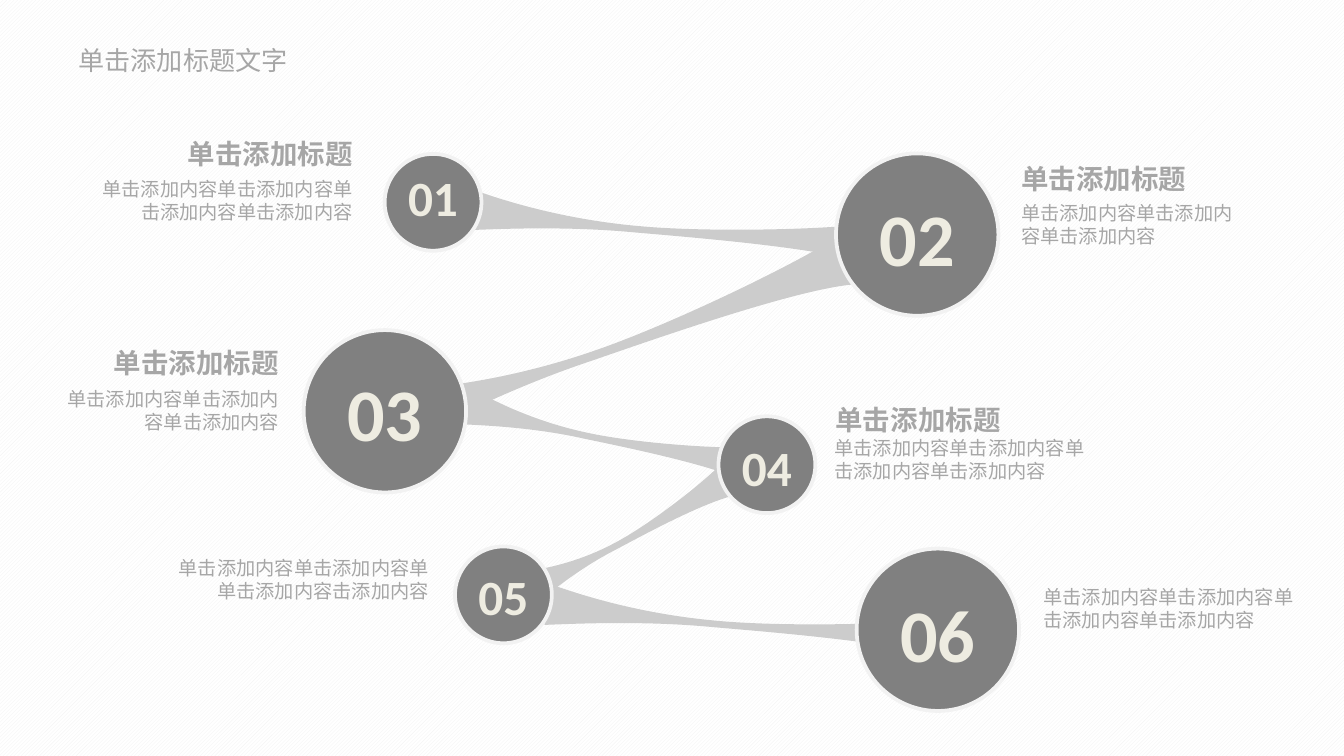
from dataclasses import dataclass

import pptx
import pptx.dml.color
import pptx.enum.dml
import pptx.enum.lang
import pptx.enum.shapes
import pptx.enum.text
import pptx.oxml.ns
import pptx.util
from lxml import etree
from pptx.util import Cm

RGB = pptx.dml.color.RGBColor
ALIGN = pptx.enum.text.PP_ALIGN
qn = pptx.oxml.ns.qn
GREY = RGB(0x80, 0x80, 0x80)
BAND = RGB(0xCC, 0xCC, 0xCC)
PALE = RGB(0xF2, 0xF2, 0xF2)
CREAM = RGB(0xEE, 0xEC, 0xE1)
TEXT = RGB(0xA6, 0xA6, 0xA6)
WHITE = RGB(0xFF, 0xFF, 0xFF)
HEAD = "单击添加标题"
ITEM = "单击添加内容"

UPPER = [(0, 0), (0.11, 0.29), (0.26, 0.55), (0.43, 0.55),
         (0.59, 0.56), (0.89, 0.26), (1, 0)]
LOWER = [(1, 1), (0.9, 0.7), (0.58, 0.71), (0.42, 0.71),
         (0.25, 0.69), (0.09, 0.89), (0, 1)]


@dataclass
class Box:
    left: float
    top: float
    width: float
    height: float

    def cm(self) -> list:
        return [Cm(v) for v in (self.left, self.top, self.width, self.height)]


@dataclass
class Band:
    box: Box
    turn: float


@dataclass
class Node:
    label: str
    left: float
    top: float
    big: bool
    base: float


@dataclass
class Note:
    text: str
    box: Box
    right: bool = False
    head: bool = False


BANDS = [
    Band(Box(10.31, 11.35, 7.62, 0.79), 4.9),
    Band(Box(9.58, 9.7, 4.6, 0.76), 331.9),
    Band(Box(8.66, 7.85, 5.72, 0.76), 11.8),
    Band(Box(8.84, 3.89, 7.62, 0.79), 4.9),
    Band(Box(7.24, 5.87, 9.12, 1.02), 340.9),
]
NODES = [
    Node("01", 7.27, 2.91, False, 3.25),
    Node("02", 15.8, 2.9, True, 3.84),
    Node("03", 5.74, 6.24, True, 7.14),
    Node("04", 13.58, 7.87, False, 8.36),
    Node("05", 8.6, 10.33, False, 10.8),
    Node("06", 16.19, 10.37, True, 11.33),
]
NOTES = [
    Note(ITEM * 3, Box(19.05, 3.68, 4.78, 1.14)),
    Note(HEAD, Box(19.05, 2.93, 3.66, 0.89), head=True),
    Note(ITEM * 4, Box(1.51, 3.23, 5.41, 1.14), right=True),
    Note(HEAD, Box(3.26, 2.46, 3.66, 0.89), right=True, head=True),
    Note(ITEM * 4, Box(19.47, 10.94, 5.41, 1.14)),
    Note("单击添加内容单击添加内容单单击添加内容击添加内容",
         Box(2.95, 10.39, 5.41, 1.14), right=True),
    Note(ITEM * 3, Box(0.88, 7.19, 4.65, 1.14), right=True),
    Note(HEAD, Box(1.86, 6.42, 3.66, 0.89), right=True, head=True),
    Note(ITEM * 4, Box(15.52, 8.13, 5.41, 1.14)),
    Note(HEAD, Box(15.54, 7.49, 3.66, 0.89), head=True),
]


def apply(item, form: dict) -> None:
    for key, value in form.items():
        setattr(item, key, value)


def write(shape, text: str, size: float, ink: RGB, align: ALIGN,
          bold: bool = False, wrap: bool = True, space: float = 1.0,
          face: str = "Calibri") -> None:
    frame = shape.text_frame
    apply(frame, {"word_wrap": wrap,
                  "auto_size": pptx.enum.text.MSO_AUTO_SIZE.SHAPE_TO_FIT_TEXT,
                  "vertical_anchor": pptx.enum.text.MSO_ANCHOR.TOP})
    para = frame.paragraphs[0]
    apply(para, {"alignment": align, "line_spacing": space})
    run = para.add_run()
    run.text = text
    apply(run.font, {"name": face, "size": pptx.util.Pt(size), "bold": bold,
                     "language_id": pptx.enum.lang.MSO_LANGUAGE_ID.SIMPLIFIED_CHINESE})
    run.font.color.rgb = ink


def bend(shape) -> None:
    lines = list(shape._element.iter(qn("a:lnTo")))
    for start in (0, 3, 7, 10):
        first, *rest = lines[start:start + 3]
        first.tag = qn("a:cubicBezTo")
        for line in rest:
            first.append(line[0])
            line.getparent().remove(line)


def draw_band(slide, band: Band) -> None:
    left, top, width, height = band.box.cm()
    dots = [(round(left + x * width), round(top + y * height))
            for x, y in UPPER + LOWER]
    pen = slide.shapes.build_freeform(*dots[0])
    pen.add_line_segments(dots[1:], close=True)
    shape = pen.convert_to_shape()
    shape.rotation = band.turn
    shape.shadow.inherit = False
    shape.fill.solid()
    shape.fill.fore_color.rgb = BAND
    shape.line.fill.background()
    for line in list(shape._element.iter(qn("a:lnTo")))[13:]:
        line.getparent().remove(line)
    bend(shape)


def draw_node(slide, node: Node) -> None:
    side, width, height, size = (3.07, 2.18, 1.63, 39.7) if node.big else (1.83, 1.6, 1.17, 26.4)
    disc = slide.shapes.add_shape(pptx.enum.shapes.MSO_SHAPE.OVAL,
                                  *Box(node.left, node.top, side, side).cm())
    disc.shadow.inherit = False
    disc.fill.solid()
    disc.fill.fore_color.rgb = GREY
    disc.line.color.rgb = PALE
    disc.line.width = pptx.util.Pt(2)
    box = Box(node.left + (side - width) / 2, node.base, width, height)
    label = slide.shapes.add_textbox(*box.cm())
    write(label, node.label, size, CREAM, ALIGN.CENTER, bold=True, space=0.8)


def draw_note(slide, note: Note) -> None:
    shape = slide.shapes.add_textbox(*note.box.cm())
    write(shape, note.text, 14.7 if note.head else 10.3, TEXT,
          ALIGN.RIGHT if note.right else ALIGN.LEFT,
          bold=note.head, wrap=not note.head)


def draw_title(slide) -> None:
    title = slide.shapes.title
    apply(title, dict(zip(("left", "top", "width", "height"),
                          Box(1.3, 0.74, 4.37, 0.79).cm())))
    apply(title.text_frame, {"margin_left": Cm(0.18), "margin_right": Cm(0.18),
                             "margin_top": Cm(0.1), "margin_bottom": Cm(0.1)})
    face = "Noto Sans CJK SC"
    write(title, "单击添加标题文字", 14, TEXT, ALIGN.LEFT, wrap=False, face=face)
    latin = title._element.find(".//" + qn("a:latin"))
    latin.addnext(etree.Element(qn("a:ea"), typeface=face))


def main() -> None:
    deck = pptx.Presentation()
    apply(deck, {"slide_width": Cm(25.4), "slide_height": Cm(14.29)})
    slide = deck.slides.add_slide(deck.slide_layouts[5])
    fill = slide.background.fill
    fill.patterned()
    fill.pattern = pptx.enum.dml.MSO_PATTERN.LIGHT_UPWARD_DIAGONAL
    fill.fore_color.rgb = PALE
    fill.back_color.rgb = WHITE
    draw_title(slide)
    for items, draw in ((BANDS, draw_band), (NODES, draw_node), (NOTES, draw_note)):
        for item in items:
            draw(slide, item)
    deck.save("out.pptx")


if __name__ == "__main__":
    main()
